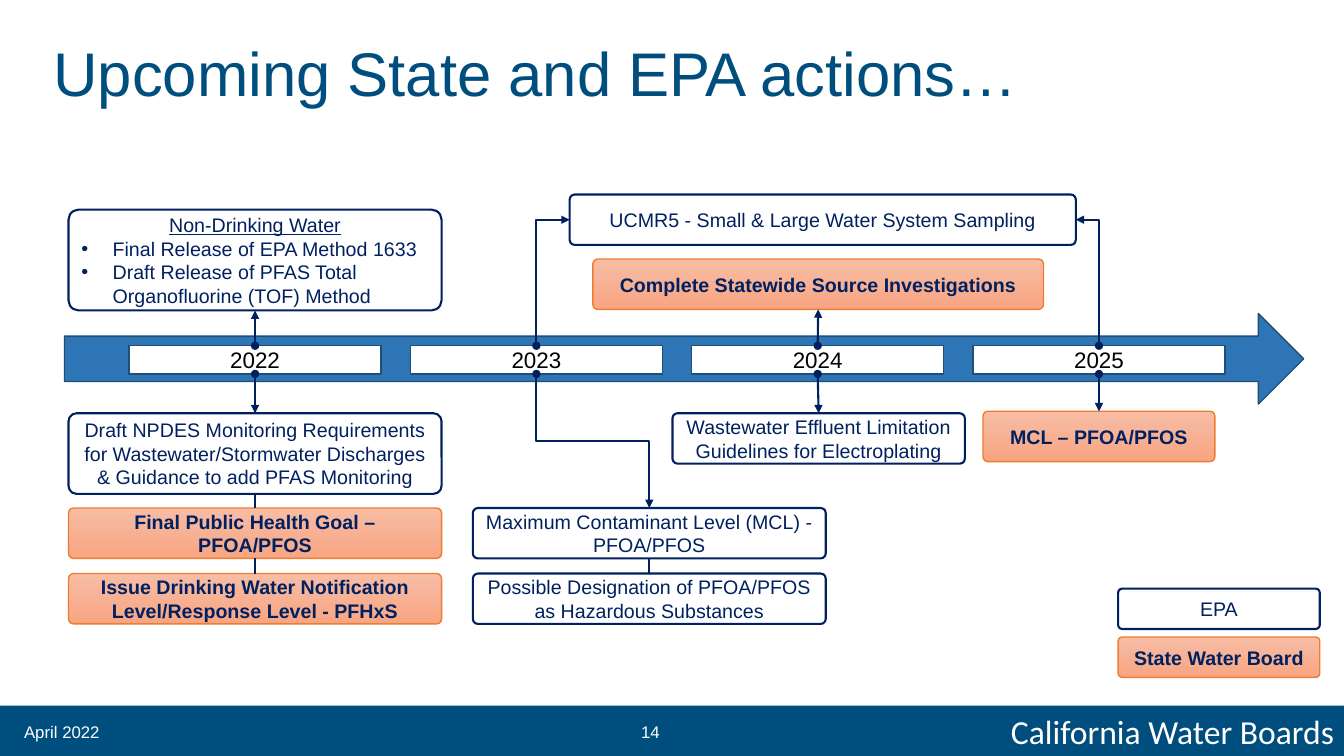
from lxml import etree
from pptx import Presentation
from pptx.dml.color import RGBColor
from pptx.enum.shapes import MSO_CONNECTOR as CONNECTOR, MSO_SHAPE as SHAPE
from pptx.enum.text import MSO_ANCHOR as ANCHOR, PP_ALIGN as ALIGN
from pptx.oxml.ns import qn
from pptx.util import Inches, Pt

NAVY, OCEAN, WHITE, BLACK = "002060", "004E7D", "FFFFFF", "000000"
ARROW_BLUE, ARROW_EDGE = "2E75B6", "1F4E79"
ORANGE, PEACH_TOP, PEACH_BOTTOM = "ED7D31", "F7BDA5", "F8A582"
TOP, BOTTOM = 0, 2
YEAR_TOP, YEAR_HEIGHT = 3.43, 0.28


def color(value):
    return RGBColor.from_string(value)


def format_text(frame, size, text_color, align, anchor=ANCHOR.MIDDLE, bold=False, font="Arial"):
    frame.word_wrap = True
    frame.vertical_anchor = anchor
    for paragraph in frame.paragraphs:
        paragraph.alignment = align
        for run in paragraph.runs:
            run.font.name = font
            run.font.size = Pt(size)
            run.font.bold = bold
            run.font.color.rgb = color(text_color)


def add_block(slide, kind, box, fill, line=None, weight=1):
    shape = slide.shapes.add_shape(kind, *map(Inches, box))
    shape.shadow.inherit = False
    shape.fill.solid()
    shape.fill.fore_color.rgb = color(fill)
    if line:
        shape.line.color.rgb = color(line)
        shape.line.width = Pt(weight)
    else:
        shape.line.fill.background()
    return shape


def add_year(slide, left, year):
    shape = add_block(slide, SHAPE.RECTANGLE, (left, YEAR_TOP, 2.5, YEAR_HEIGHT), WHITE, ARROW_EDGE)
    shape.text_frame.text = year
    format_text(shape.text_frame, 16, BLACK, ALIGN.CENTER)
    return shape


def add_action(slide, box, text, state=False):
    line, weight = (ORANGE, 1) if state else (NAVY, 1.5)
    shape = add_block(slide, SHAPE.ROUNDED_RECTANGLE, box, WHITE, line, weight)
    shape.adjustments[0] = 0.1
    if state:
        shape.fill.gradient()
        shape.fill.gradient_angle = 270
        for stop, stop_color in zip(shape.fill.gradient_stops, (PEACH_TOP, PEACH_BOTTOM)):
            stop.color.rgb = color(stop_color)
    shape.text_frame.text = text
    format_text(shape.text_frame, 14, NAVY, ALIGN.CENTER, bold=state)
    return shape


def add_bullets(paragraphs):
    for paragraph in paragraphs:
        paragraph.alignment = ALIGN.LEFT
        properties = paragraph._p.get_or_add_pPr()
        properties.set("marL", str(Inches(0.31)))
        properties.set("indent", str(-Inches(0.31)))
        etree.SubElement(properties, qn("a:buFont")).set("typeface", "Arial")
        etree.SubElement(properties, qn("a:buChar")).set("char", "•")


def style_connector(connector, arrow=True):
    connector.line.color.rgb = color(NAVY)
    connector.line.width = Pt(1.5)
    if arrow:
        line = connector.line._get_or_add_ln()
        etree.SubElement(line, qn("a:headEnd")).set("type", "oval")
        etree.SubElement(line, qn("a:tailEnd")).set("type", "triangle")
    etree.SubElement(connector._element.spPr, qn("a:effectLst"))


def join(slide, start, start_side, end, end_side, arrow=True):
    connector = slide.shapes.add_connector(CONNECTOR.STRAIGHT, 0, 0, 0, 0)
    connector.begin_connect(start, start_side)
    connector.end_connect(end, end_side)
    style_connector(connector, arrow)


def add_elbow(slide, start, end, preset):
    (x1, y1), (x2, y2) = start, end
    width, height = abs(y2 - y1), abs(x2 - x1)
    left, top = (x1 + x2 - width) / 2, (y1 + y2 - height) / 2
    corners = map(Inches, (left, top, left + width, top + height))
    connector = slide.shapes.add_connector(CONNECTOR.ELBOW, *corners)
    properties = connector._element.spPr
    properties.find(qn("a:prstGeom")).set("prst", preset)
    transform = properties.find(qn("a:xfrm"))
    down, right = y2 > y1, x2 > x1
    transform.set("rot", str((90 if down else 270) * 60000))
    if down == right:
        transform.set("flipV", "1")
    style_connector(connector)


def add_title(slide, text):
    title = slide.shapes.title
    title.left, title.top, title.width, title.height = map(Inches, (0.43, 0.29, 12.86, 0.84))
    title.text_frame.text = text
    format_text(title.text_frame, 44, OCEAN, ALIGN.LEFT, ANCHOR.BOTTOM)


def add_footer(slide):
    band = add_block(slide, SHAPE.RECTANGLE, (0, 7, 13.33, 0.5), OCEAN)
    band.text_frame.text = "California Water Boards"
    format_text(band.text_frame, 24, WHITE, ALIGN.RIGHT, font="Calibri")
    for left, width, text in ((0.14, 1.71, "April 2022"), (6.26, 0.75, "14")):
        label = slide.shapes.add_textbox(*map(Inches, (left, 7.06, width, 0.4)))
        label.text_frame.text = text
        format_text(label.text_frame, 12, WHITE, ALIGN.LEFT)


def main():
    presentation = Presentation()
    presentation.slide_width, presentation.slide_height = Inches(13.33), Inches(7.5)
    slide = presentation.slides.add_slide(presentation.slide_layouts[5])
    add_title(slide, "Upcoming State and EPA actions…")
    add_footer(slide)

    add_block(slide, SHAPE.RIGHT_ARROW, (0.64, 3.11, 12.29, 0.9), ARROW_BLUE, ARROW_EDGE)
    years = {year: add_year(slide, 1.28 + 2.79 * index, str(year))
             for index, year in enumerate(range(2022, 2026))}

    methods = add_action(slide, (0.68, 2.08, 3.7, 1),
                         "Non-Drinking Water\nFinal Release of EPA Method 1633\n"
                         "Draft Release of PFAS Total Organofluorine (TOF) Method")
    heading, *releases = methods.text_frame.paragraphs
    heading.runs[0].font.underline = True
    add_bullets(releases)
    monitoring = add_action(slide, (0.68, 4.1, 3.7, 0.8),
                            "Draft NPDES Monitoring Requirements for Wastewater/Stormwater "
                            "Discharges\v& Guidance to add PFAS Monitoring")
    health_goal = add_action(slide, (0.68, 5.04, 3.7, 0.5),
                             "Final Public Health Goal – PFOA/PFOS", True)
    notification = add_action(slide, (0.68, 5.69, 3.7, 0.5),
                              "Issue Drinking Water Notification Level/Response Level - PFHxS", True)
    contaminant = add_action(slide, (4.69, 5.04, 3.5, 0.5),
                             "Maximum Contaminant Level (MCL) - PFOA/PFOS")
    hazardous = add_action(slide, (4.69, 5.69, 3.5, 0.5),
                           "Possible Designation of PFOA/PFOS as Hazardous Substances")
    add_action(slide, (5.65, 1.93, 5.02, 0.5), "UCMR5 - Small & Large Water System Sampling")
    investigations = add_action(slide, (5.88, 2.57, 4.47, 0.5),
                                "Complete Statewide Source Investigations", True)
    effluent = add_action(slide, (6.67, 4.1, 2.9, 0.5),
                          "Wastewater Effluent Limitation Guidelines for Electroplating")
    state_limit = add_action(slide, (9.75, 4.08, 2.3, 0.5), "MCL – PFOA/PFOS", True)
    add_action(slide, (11.09, 5.84, 2, 0.4), "EPA")
    add_action(slide, (11.09, 6.32, 2, 0.4), "State Water Board", True)

    for year, action in ((2022, methods), (2024, investigations)):
        join(slide, years[year], TOP, action, BOTTOM)
    for year, action in ((2022, monitoring), (2024, effluent), (2025, state_limit)):
        join(slide, years[year], BOTTOM, action, TOP)
    for upper, lower in ((monitoring, health_goal), (health_goal, notification),
                         (contaminant, hazardous)):
        join(slide, upper, BOTTOM, lower, TOP, arrow=False)
    add_elbow(slide, (5.32, YEAR_TOP), (5.65, 2.18), "bentConnector2")
    add_elbow(slide, (10.9, YEAR_TOP), (10.67, 2.18), "bentConnector2")
    add_elbow(slide, (5.32, YEAR_TOP + YEAR_HEIGHT), (6.44, 5.04), "bentConnector3")

    presentation.save("out.pptx")


if __name__ == "__main__":
    main()
